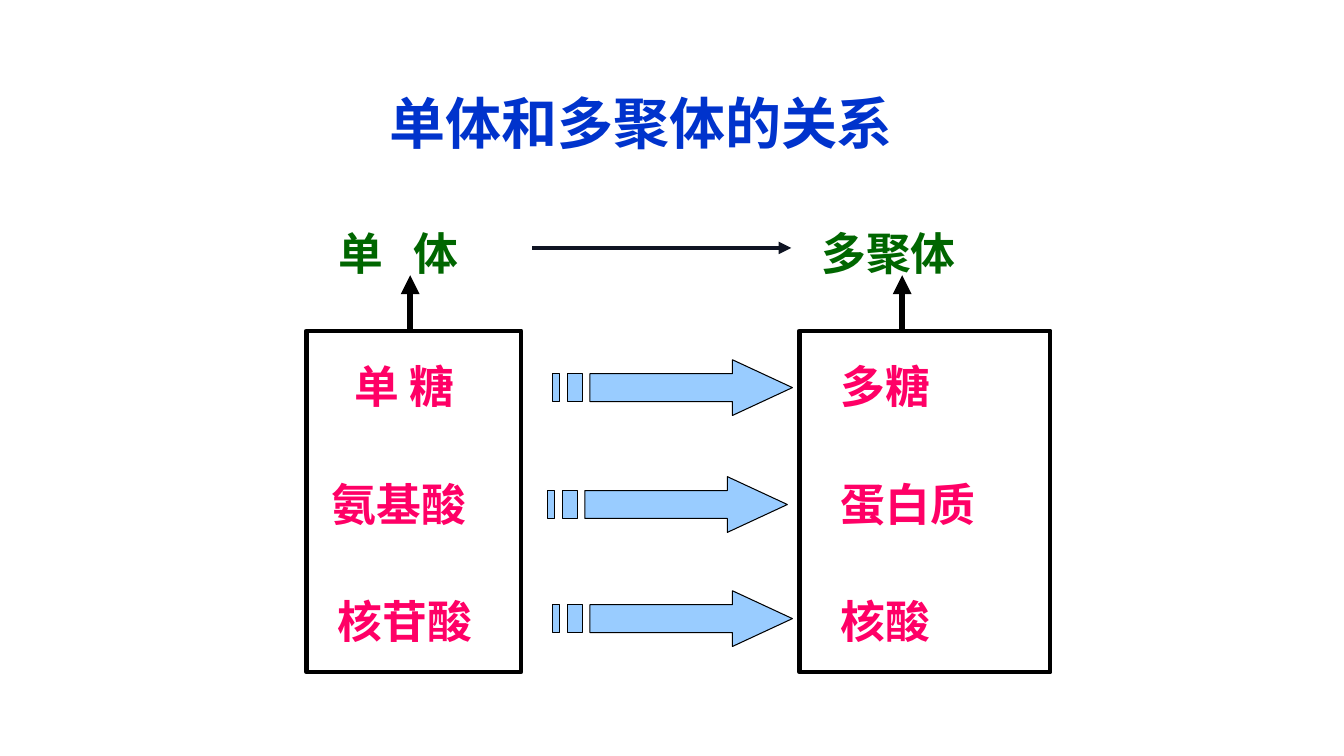
from lxml.etree import SubElement
from pptx import Presentation
from pptx.dml.color import RGBColor
from pptx.enum.shapes import MSO_CONNECTOR, MSO_SHAPE
from pptx.enum.text import MSO_ANCHOR, MSO_AUTO_SIZE, PP_ALIGN
from pptx.oxml.ns import qn
from pptx.util import Pt

BLUE = RGBColor(0x00, 0x33, 0xCC)
GREEN = RGBColor(0x00, 0x66, 0x00)
PINK = RGBColor(0xFF, 0x00, 0x66)
SKY = RGBColor(0x99, 0xCC, 0xFF)
NAVY = RGBColor(0x0F, 0x14, 0x23)
BLACK = RGBColor(0x00, 0x00, 0x00)

HEAD = [(24, 0), (24, 1), (5, 1), (5, 3), (24, 3), (24, 4), (32, 2)]
WIDE_STRIPE = [(2, 1), (2, 3), (4, 3), (4, 1)]
THIN_STRIPE = [(0, 1), (0, 3), (1, 3), (1, 1)]


class Diagram:
    font = "Noto Sans CJK SC"

    def __init__(self, slide):
        self.shapes = slide.shapes

    def text(self, runs, x, y, w, h, color, size=32, align=PP_ALIGN.LEFT,
             anchor=MSO_ANCHOR.TOP, fit=MSO_AUTO_SIZE.SHAPE_TO_FIT_TEXT):
        sp = self.shapes.add_textbox(Pt(x), Pt(y), Pt(w), Pt(h))
        tf = sp.text_frame
        tf.word_wrap = True
        tf.auto_size = fit
        tf.vertical_anchor = anchor
        p = tf.paragraphs[0]
        p.alignment = align
        for words, spacing in runs:
            r = p.add_run()
            r.text = words
            r.font.size = Pt(size)
            r.font.bold = True
            r.font.name = self.font
            r.font.color.rgb = color
            rPr = r.font._element
            if spacing:
                rPr.set("spc", str(spacing * 100))
            SubElement(rPr, qn("a:ea")).set("typeface", self.font)

    def box(self, x, y, w, h):
        sp = self.shapes.add_shape(MSO_SHAPE.RECTANGLE, Pt(x), Pt(y), Pt(w), Pt(h))
        sp.shadow.inherit = False
        sp.fill.background()
        sp.line.color.rgb = BLACK
        sp.line.width = Pt(3)

    def arrow(self, x1, y1, x2, y2, color, width):
        cx = self.shapes.add_connector(
            MSO_CONNECTOR.STRAIGHT, Pt(x1), Pt(y1), Pt(x2), Pt(y2))
        cx.line.color.rgb = color
        cx.line.width = Pt(width)
        SubElement(cx.line._get_or_add_ln(), qn("a:tailEnd")).set("type", "triangle")
        SubElement(cx._element.spPr, qn("a:effectLst"))

    def striped_arrow(self, x, y, w=171.4, h=39.8):
        builder = self.shapes.build_freeform(
            *HEAD[0], scale=(Pt(w) / 32, Pt(h) / 4))
        builder.add_line_segments(HEAD[1:], close=True)
        for stripe in (WIDE_STRIPE, THIN_STRIPE):
            builder.move_to(*stripe[0])
            builder.add_line_segments(stripe[1:], close=True)
        sp = builder.convert_to_shape(Pt(x), Pt(y))
        sp.shadow.inherit = False
        sp.fill.solid()
        sp.fill.fore_color.rgb = SKY
        sp.line.color.rgb = BLACK
        sp.line.width = Pt(0.75)


def main():
    prs = Presentation()
    prs.slide_width, prs.slide_height = Pt(960), Pt(540)
    s = prs.slides.add_slide(prs.slide_layouts[6])
    d = Diagram(s)

    d.text([("单体和多聚体的关系", 0)], 152, 42, 612, 90, BLUE, 40,
           PP_ALIGN.CENTER, MSO_ANCHOR.MIDDLE, MSO_AUTO_SIZE.NONE)

    d.text([("单", 0), (" ", 14), ("体", 0)], 234.7, 157.5, 130.3, 46, GREEN)
    d.text([("多聚体", 0)], 579.6, 157.5, 130.3, 46, GREEN)
    d.arrow(380.2, 177.1, 565.2, 177.1, NAVY, 3)

    for x, w, stem in ((218.9, 153.4, 293), (571, 179.3, 644.4)):
        d.box(x, 236.2, w, 244)
        d.arrow(stem, 236.2, stem, 196.6, BLACK, 4.5)

    rows = [
        ("单 糖", 246.2, "多糖", 394.6, 257),
        ("氨基酸", 229.7, "蛋白质", 391, 340.5),
        ("核苷酸", 234, "核酸", 394.6, 422),
    ]
    for i, (monomer, x, polymer, arrow_x, arrow_y) in enumerate(rows):
        y = 252.6 + 84 * i
        d.text([(monomer, 0)], x, y, 124, 46, PINK)
        d.text([(polymer, 0)], 593.4, y, 142, 46, PINK)
        d.striped_arrow(arrow_x, arrow_y)

    prs.save("out.pptx")


if __name__ == "__main__":
    main()
